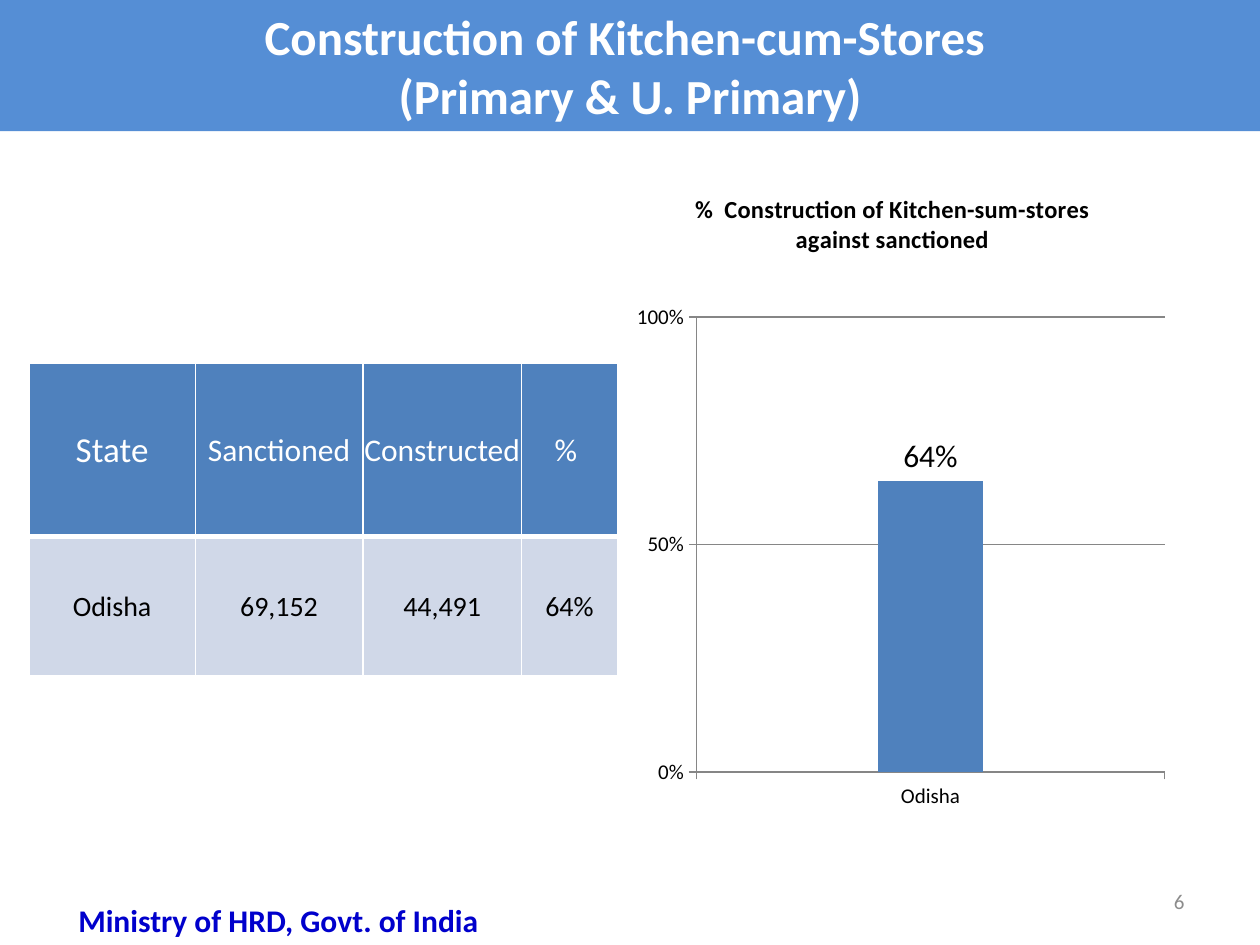
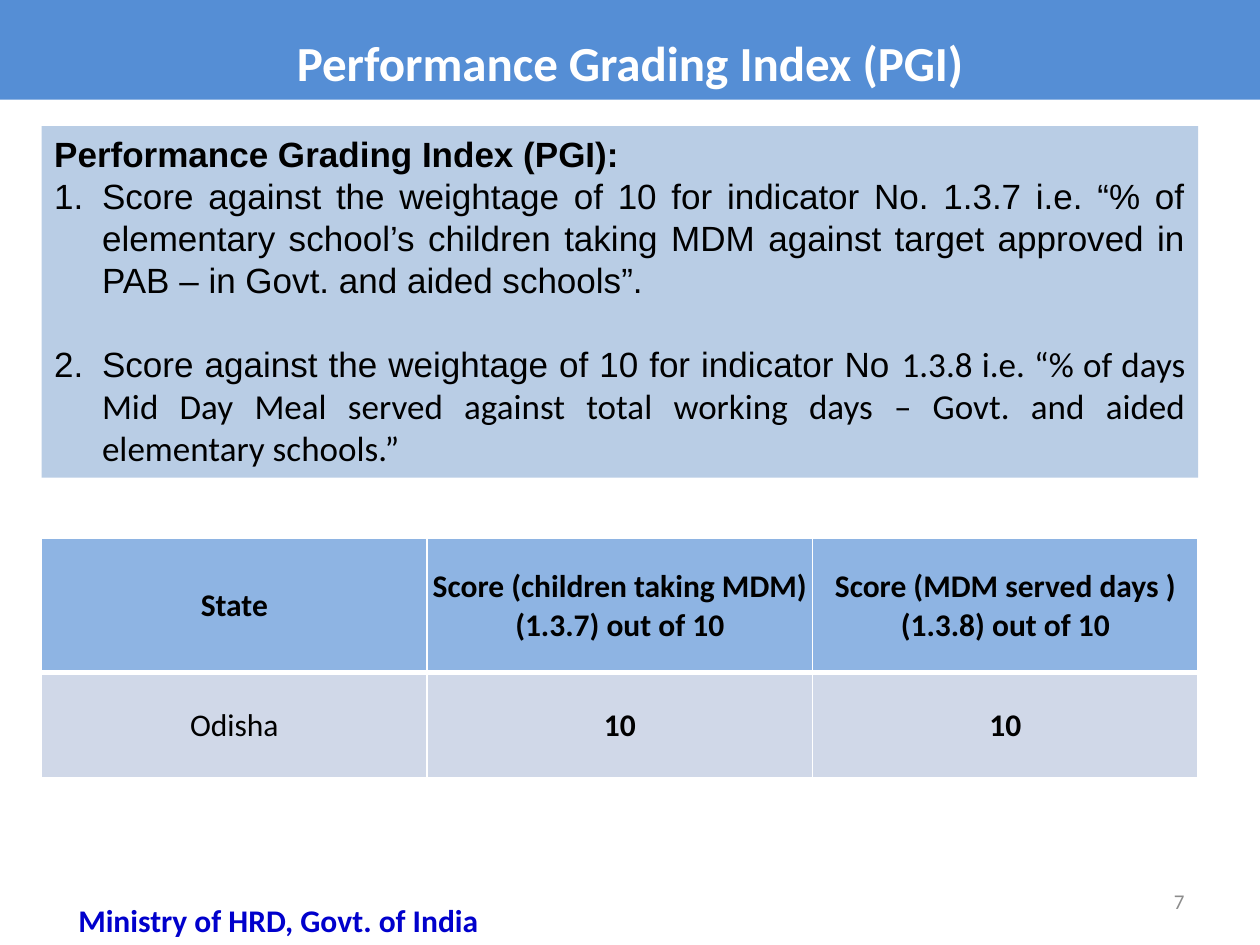
from collections import namedtuple

from lxml import etree
from pptx import Presentation
from pptx.chart.data import CategoryChartData
from pptx.dml.color import RGBColor
from pptx.enum.chart import XL_CHART_TYPE, XL_LABEL_POSITION, XL_TICK_MARK
from pptx.enum.text import MSO_ANCHOR, MSO_AUTO_SIZE, PP_ALIGN
from pptx.oxml import parse_xml
from pptx.oxml.ns import nsdecls, qn
from pptx.util import Inches, Pt

WHITE = RGBColor(0xFF, 0xFF, 0xFF)
BLACK = RGBColor(0, 0, 0)
BAND_BLUE = RGBColor(0x55, 0x8E, 0xD5)
BAR_BLUE = RGBColor(0x4F, 0x81, 0xBD)
HEADER_BLUE = RGBColor(0x8E, 0xB4, 0xE3)
ROW_BLUE = RGBColor(0xD0, 0xD8, 0xE8)
PANEL_BLUE = RGBColor(0xB9, 0xCD, 0xE5)
FOOTER_BLUE = RGBColor(0, 0, 0xCC)
NUMBER_GREY = RGBColor(0x8C, 0x8C, 0x8C)
AXIS_GREY = RGBColor(0x86, 0x86, 0x86)

MAIN_FONT = "Calibri"
PANEL_FONT = "Arial"

Box = namedtuple("Box", "left top width height")
CellText = namedtuple("CellText", "text size bold", defaults=(18, False))


def place(shape, box):
    """Move and size a shape to a box given in inches."""
    shape.left, shape.top, shape.width, shape.height = map(Inches, box)


def style_font(font, size, color, bold=False, name=MAIN_FONT):
    """Set the size, colour, weight and typeface of a font."""
    font.size, font.bold, font.name = Pt(size), bold, name
    font.color.rgb = color


def style_text(text_frame, alignment, size, color, bold=False):
    """Align every paragraph and format every run of a text frame."""
    for paragraph in text_frame.paragraphs:
        paragraph.alignment = alignment
        for run in paragraph.runs:
            style_font(run.font, size, color, bold)


def fill_solid(target, color):
    """Give a shape, cell or chart format a solid fill."""
    target.fill.solid()
    target.fill.fore_color.rgb = color


def add_title_band(slide, text, height, line_spacing=1.0):
    """Turn the title placeholder into the band across the top."""
    title = slide.shapes.title
    place(title, Box(0, 0, 10, height))
    fill_solid(title, BAND_BLUE)
    text_frame = title.text_frame
    text_frame.text = text
    text_frame.auto_size = MSO_AUTO_SIZE.NONE
    text_frame.vertical_anchor = MSO_ANCHOR.MIDDLE
    style_text(text_frame, PP_ALIGN.CENTER, 28, WHITE, bold=True)
    for paragraph in text_frame.paragraphs:
        paragraph.line_spacing = line_spacing


def add_label(slide, box, text, alignment, size, color, bold=False):
    """Add a wrapped one-style text box and return its text frame."""
    label = slide.shapes.add_textbox(*map(Inches, box))
    text_frame = label.text_frame
    text_frame.word_wrap = True
    text_frame.text = text
    style_text(text_frame, alignment, size, color, bold)
    return text_frame


def add_footer(slide, number):
    """Add the slide number and the ministry's name."""
    number_frame = add_label(slide, Box(7.17, 6.95, 2.33, 0.4), str(number),
                             PP_ALIGN.RIGHT, 12, NUMBER_GREY)
    number_frame.vertical_anchor = MSO_ANCHOR.MIDDLE
    add_label(slide, Box(0.25, 7.1, 3.92, 0.4), "Ministry of HRD, Govt. of India",
              PP_ALIGN.CENTER, 18, FOOTER_BLUE, bold=True)


def set_cell_borders(cell, top, bottom):
    """Draw white borders, with the top and bottom widths in points."""
    properties = cell._tc.get_or_add_tcPr()
    widths = {"lnL": 1, "lnR": 1, "lnT": top, "lnB": bottom}
    for position, (tag, width) in enumerate(widths.items()):
        border = parse_xml(
            f'<a:{tag} {nsdecls("a")} w="{Pt(width)}"><a:solidFill>'
            f'<a:srgbClr val="{WHITE}"/></a:solidFill></a:{tag}>')
        properties.insert(position, border)


def add_score_table(slide, box, column_widths, row_heights, rows, header_fill, header_color):
    """Add a table with a coloured header row above pale rows."""
    frame = slide.shapes.add_table(len(rows), len(column_widths), *map(Inches, box))
    table = frame.table
    table.horz_banding = False
    for column, width in zip(table.columns, column_widths):
        column.width = Inches(width)
    for row_index, (row, height) in enumerate(zip(rows, row_heights)):
        table.rows[row_index].height = Inches(height)
        is_header = row_index == 0
        for column_index, content in enumerate(row):
            cell = table.cell(row_index, column_index)
            cell.text = content.text
            cell.vertical_anchor = MSO_ANCHOR.MIDDLE
            cell.margin_left = cell.margin_right = cell.margin_top = Inches(0.01)
            cell.margin_bottom = 0
            fill_solid(cell, header_fill if is_header else ROW_BLUE)
            set_cell_borders(cell, top=3 if row_index == 1 else 1, bottom=3 if is_header else 1)
            style_text(cell.text_frame, PP_ALIGN.CENTER, content.size,
                       header_color if is_header else BLACK, content.bold)


def set_plot_layout(chart, box):
    """Fix the inner plot area at fractions of the chart."""
    plot_area = chart._chartSpace.chart.plotArea
    for old_layout in plot_area.findall(qn("c:layout")):
        plot_area.remove(old_layout)
    layout = etree.Element(qn("c:layout"))
    manual = etree.SubElement(layout, qn("c:manualLayout"))
    settings = {"layoutTarget": "inner", "xMode": "edge", "yMode": "edge",
                "x": box.left, "y": box.top, "w": box.width, "h": box.height}
    for tag, value in settings.items():
        etree.SubElement(manual, qn(f"c:{tag}")).set("val", str(value))
    plot_area.insert(0, layout)


def add_construction_chart(slide, box):
    """Add the column chart of constructed against sanctioned stores."""
    data = CategoryChartData(number_format="0%")
    data.categories = ["Odisha"]
    data.add_series("Series 1", [0.64])
    frame = slide.shapes.add_chart(XL_CHART_TYPE.COLUMN_CLUSTERED, *map(Inches, box), data)
    chart = frame.chart
    style_font(chart.font, 18, BLACK)
    chart.has_legend = False
    chart.has_title = True
    title_frame = chart.chart_title.text_frame
    title_frame.text = "%  Construction of Kitchen-sum-stores against sanctioned"
    style_text(title_frame, PP_ALIGN.CENTER, 14, BLACK, bold=True)

    value_axis = chart.value_axis
    value_axis.minimum_scale, value_axis.maximum_scale, value_axis.major_unit = 0, 1, 0.5
    value_axis.has_major_gridlines = True
    value_axis.major_gridlines.format.line.color.rgb = AXIS_GREY
    value_axis.tick_labels.number_format = "0%"
    value_axis.tick_labels.number_format_is_linked = False
    for axis in (chart.category_axis, value_axis):
        axis.major_tick_mark = XL_TICK_MARK.OUTSIDE
        axis.format.line.color.rgb = AXIS_GREY
        style_font(axis.tick_labels.font, 12, BLACK)

    plot = chart.plots[0]
    plot.gap_width = 349
    plot.vary_by_categories = False
    fill_solid(plot.series[0].format, BAR_BLUE)
    plot.has_data_labels = True
    labels = plot.data_labels
    labels.show_value = True
    labels.number_format, labels.number_format_is_linked = "0%", False
    labels.position = XL_LABEL_POSITION.OUTSIDE_END
    style_font(labels.font, 18, BLACK)
    set_plot_layout(chart, Box(0.14, 0.22, 0.86, 0.67))


def set_numbering(paragraph, numbered):
    """Number a paragraph with a hanging indent, or clear its bullet."""
    properties = paragraph._p.get_or_add_pPr()
    indent = Inches(0.38) if numbered else 0
    properties.set("marL", str(indent))
    properties.set("indent", str(-indent))
    if numbered:
        etree.SubElement(properties, qn("a:buFont")).set("typeface", "+mj-lt")
        etree.SubElement(properties, qn("a:buAutoNum")).set("type", "arabicPeriod")
    else:
        etree.SubElement(properties, qn("a:buNone"))


def add_indicator_panel(slide, box):
    """Fill the body placeholder with the heading and two indicators."""
    panel = slide.placeholders[1]
    place(panel, box)
    fill_solid(panel, PANEL_BLUE)
    text_frame = panel.text_frame
    text_frame.auto_size = MSO_AUTO_SIZE.NONE
    text_frame.vertical_anchor = MSO_ANCHOR.TOP
    paragraphs = [
        [("Performance Grading Index (PGI): ", PANEL_FONT)],
        [("Score against the weightage of 10 for indicator No. 1.3.7 i.e. “% of elementary "
          "school’s children taking MDM against target approved in PAB – in Govt. and aided "
          "schools”.", PANEL_FONT)],
        [("Score against the weightage of 10 for indicator No ", PANEL_FONT),
         ("1.3.8 i.e. “% of days Mid Day Meal served against total working days – Govt. and "
          "aided elementary schools.”", MAIN_FONT)],
    ]
    for index, pieces in enumerate(paragraphs):
        paragraph = text_frame.paragraphs[0] if index == 0 else text_frame.add_paragraph()
        paragraph.alignment = PP_ALIGN.JUSTIFY
        paragraph.line_spacing = Pt(24)
        paragraph.space_before = Pt(24 if index == 2 else 0)
        set_numbering(paragraph, numbered=index > 0)
        for text, font_name in pieces:
            run = paragraph.add_run()
            run.text = text
            style_font(run.font, 20, BLACK, bold=index == 0, name=font_name)


def build_kitchen_slide(presentation):
    """Build the slide on construction of kitchen-cum-stores."""
    slide = presentation.slides.add_slide(presentation.slide_layouts[5])
    add_title_band(slide, "Construction of Kitchen-cum-Stores \n(Primary & U. Primary)", 1.04)
    rows = [
        [CellText("State", 20), CellText("Sanctioned"), CellText("Constructed"), CellText("% ")],
        [CellText(text, 16) for text in ("Odisha", "69,152", "44,491", "64%")],
    ]
    add_score_table(slide, Box(0.23, 2.88, 4.67, 2.48), [1.32, 1.33, 1.26, 0.76],
                    [1.38, 1.1], rows, BAR_BLUE, WHITE)
    add_construction_chart(slide, Box(4.92, 1.33, 4.33, 5.39))
    add_footer(slide, 6)


def build_grading_slide(presentation):
    """Build the slide on the Performance Grading Index."""
    slide = presentation.slides.add_slide(presentation.slide_layouts[1])
    add_title_band(slide, "Performance Grading Index (PGI)", 0.79, line_spacing=1.4)
    add_indicator_panel(slide, Box(0.33, 1, 9.18, 2.79))
    headings = ("State", "Score (children taking MDM)\n(1.3.7) out of 10",
                "Score (MDM served days )\n(1.3.8) out of 10")
    rows = [
        [CellText(heading, bold=True) for heading in headings],
        [CellText("Odisha"), CellText("10", bold=True), CellText("10", bold=True)],
    ]
    add_score_table(slide, Box(0.33, 4.27, 9.18, 1.9), [3.06] * 3, [1.07, 0.83],
                    rows, HEADER_BLUE, BLACK)
    add_footer(slide, 7)


def main():
    """Build and save the presentation."""
    presentation = Presentation()
    presentation.slide_width, presentation.slide_height = Inches(10), Inches(7.5)
    build_kitchen_slide(presentation)
    build_grading_slide(presentation)
    presentation.save("out.pptx")


if __name__ == "__main__":
    main()
